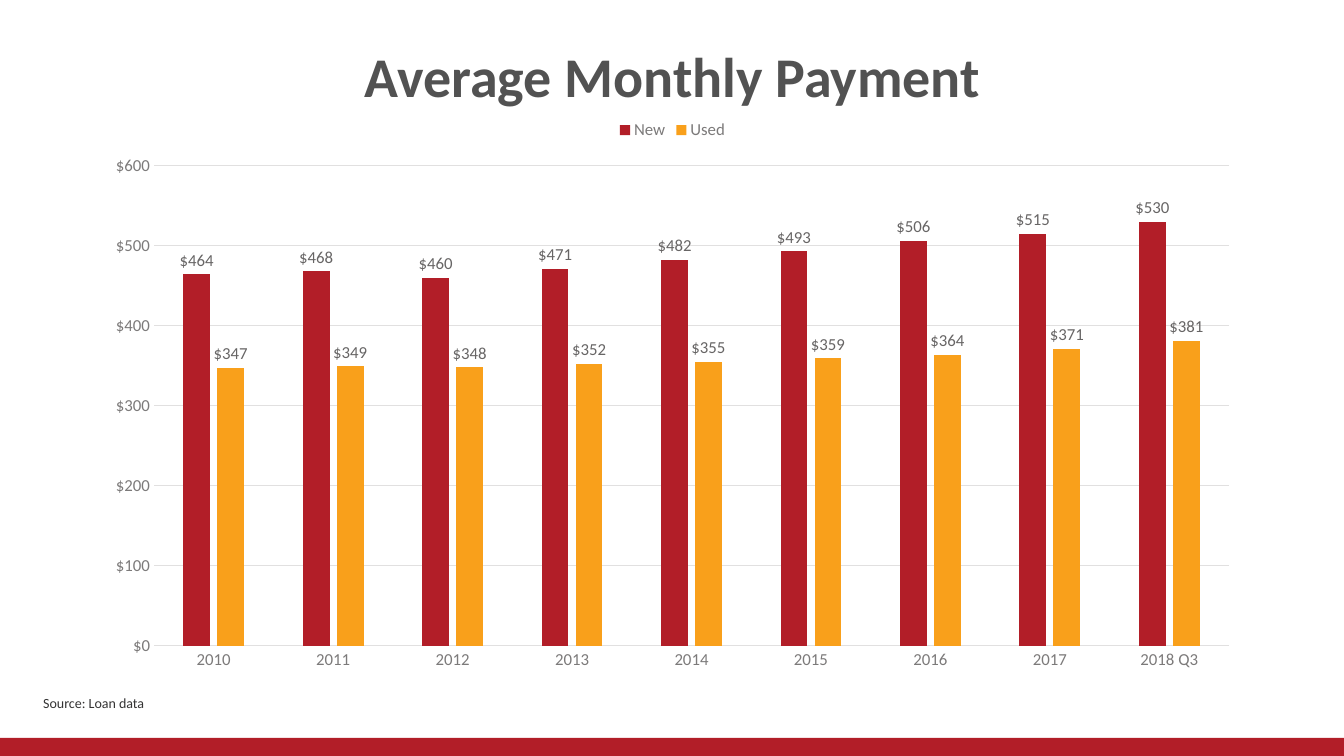
from dataclasses import dataclass

from pptx import Presentation
from pptx.chart.data import CategoryChartData
from pptx.dml.color import RGBColor
from pptx.enum.chart import (XL_CHART_TYPE, XL_LABEL_POSITION,
                             XL_LEGEND_POSITION, XL_TICK_MARK)
from pptx.enum.shapes import MSO_SHAPE
from pptx.enum.text import MSO_ANCHOR, PP_ALIGN
from pptx.util import Inches, Pt

RED = RGBColor(0xB2, 0x1E, 0x28)
AMBER = RGBColor(0xF9, 0xA0, 0x1B)
SLATE = RGBColor(0x52, 0x52, 0x52)
INK = RGBColor(0x34, 0x33, 0x33)
GREY = RGBColor(0x7C, 0x7A, 0x7A)
LABEL = RGBColor(0x67, 0x65, 0x65)
RULE = RGBColor(0xE1, 0xE0, 0xE0)
FACE = "Calibri"
MONEY = '"$"#,##0'


@dataclass
class Series:
    name: str
    color: RGBColor
    values: tuple[int, ...]


YEARS = [str(year) for year in range(2010, 2018)] + ["2018 Q3"]
SERIES = [
    Series("New", RED, (464, 468, 460, 471, 482, 493, 506, 515, 530)),
    Series("Used", AMBER, (347, 349, 348, 352, 355, 359, 364, 371, 381)),
]


def style(font, size: float, color: RGBColor, bold: bool = False) -> None:
    font.name = FACE
    font.size = Pt(size)
    font.bold = bold
    font.color.rgb = color


def add_text(slide, text: str, *, left: float, top: float, width: float,
             height: float, size: float, color: RGBColor, bold: bool = False,
             align=PP_ALIGN.LEFT, anchor=MSO_ANCHOR.TOP) -> None:
    box = slide.shapes.add_textbox(Inches(left), Inches(top),
                                   Inches(width), Inches(height))
    frame = box.text_frame
    frame.word_wrap = True
    frame.vertical_anchor = anchor
    para = frame.paragraphs[0]
    para.alignment = align
    run = para.add_run()
    run.text = text
    style(run.font, size, color, bold)


def rule(line) -> None:
    line.color.rgb = RULE
    line.width = Pt(0.75)


def add_bars(slide) -> None:
    data = CategoryChartData(number_format=MONEY)
    data.categories = YEARS
    for item in SERIES:
        data.add_series(item.name, item.values)
    chart = slide.shapes.add_chart(
        XL_CHART_TYPE.COLUMN_CLUSTERED, Inches(0.92), Inches(1.08),
        Inches(11.5), Inches(5.68), data).chart
    style(chart.font, 10, INK)
    chart.has_title = False

    # Legend
    chart.has_legend = True
    chart.legend.position = XL_LEGEND_POSITION.TOP
    chart.legend.include_in_layout = False
    style(chart.legend.font, 12, GREY)

    # Axes
    for axis in (chart.category_axis, chart.value_axis):
        axis.major_tick_mark = XL_TICK_MARK.NONE
        axis.minor_tick_mark = XL_TICK_MARK.NONE
        style(axis.tick_labels.font, 12, GREY)
    rule(chart.category_axis.format.line)
    scale = chart.value_axis
    scale.minimum_scale, scale.maximum_scale, scale.major_unit = 0, 600, 100
    scale.format.line.fill.background()
    scale.tick_labels.number_format = MONEY
    scale.tick_labels.number_format_is_linked = False
    rule(scale.major_gridlines.format.line)

    # Columns and their labels
    plot = chart.plots[0]
    plot.vary_by_categories = False
    plot.gap_width = 219
    plot.overlap = -27
    for item, bars in zip(SERIES, plot.series):
        bars.format.fill.solid()
        bars.format.fill.fore_color.rgb = item.color
        bars.invert_if_negative = False
        labels = bars.data_labels
        labels.show_value = True
        labels.position = XL_LABEL_POSITION.OUTSIDE_END
        labels.number_format = MONEY
        labels.number_format_is_linked = False
        style(labels.font, 12, LABEL)


def main() -> None:
    deck = Presentation()
    deck.slide_width = Inches(13.33)
    deck.slide_height = Inches(7.5)
    slide = deck.slides.add_slide(deck.slide_layouts[6])

    # Footer band
    band = slide.shapes.add_shape(MSO_SHAPE.RECTANGLE, 0, Inches(7.32),
                                  Inches(13.33), Inches(0.18))
    band.shadow.inherit = False
    band.fill.solid()
    band.fill.fore_color.rgb = RED
    band.line.fill.background()

    # Title, chart and source
    add_text(slide, "Average Monthly Payment", left=0.92, top=0.02,
             width=11.5, height=1.45, size=40, color=SLATE, bold=True,
             align=PP_ALIGN.CENTER, anchor=MSO_ANCHOR.MIDDLE)
    add_bars(slide)
    add_text(slide, "Source: Loan data", left=0.33, top=6.84, width=3.58,
             height=0.27, size=10, color=INK)

    deck.save("out.pptx")


if __name__ == "__main__":
    main()
